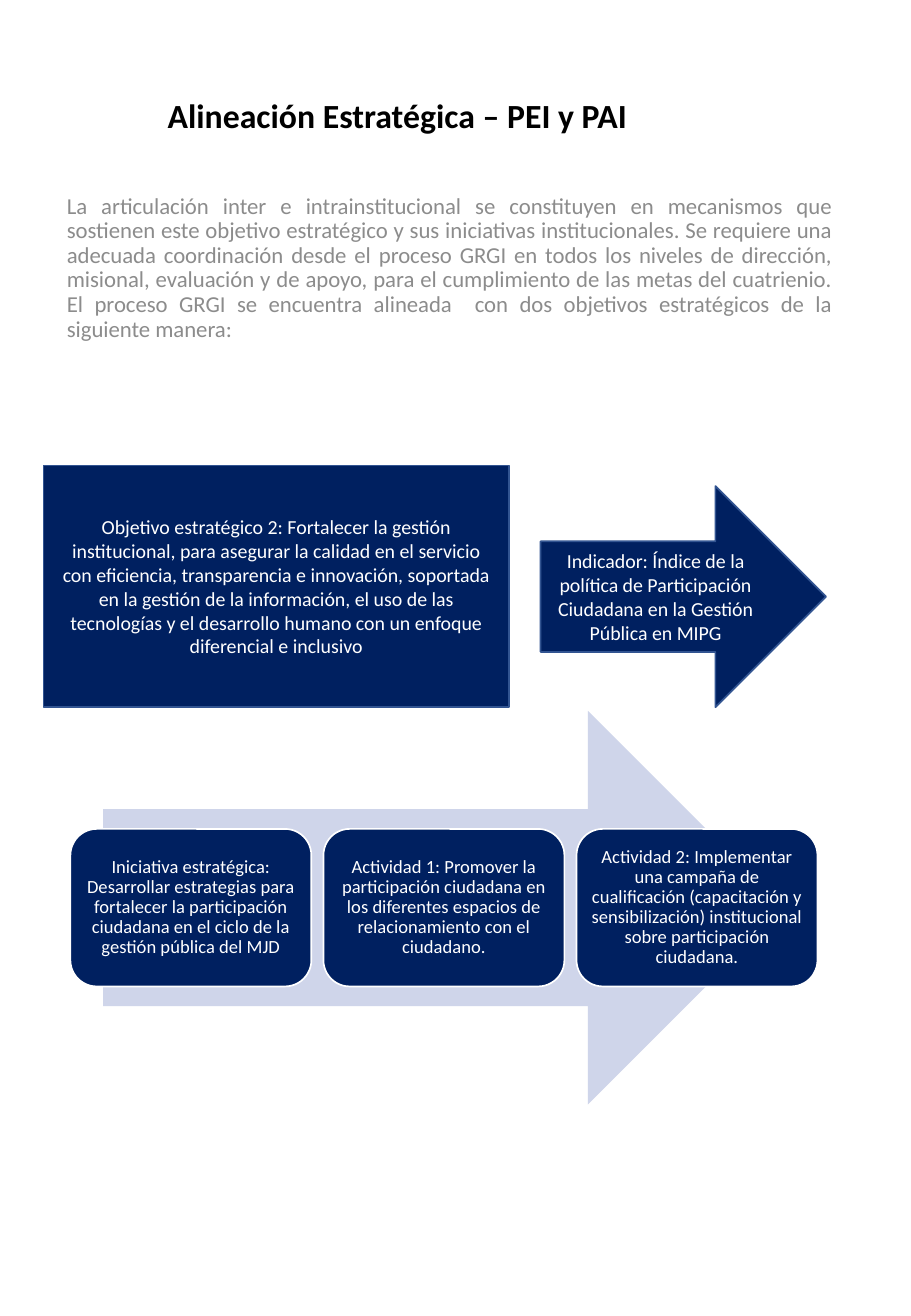
import pptx
import pptx.dml.color
import pptx.enum.shapes
import pptx.enum.text
import pptx.util
from lxml import etree

Inches = pptx.util.Inches
Pt = pptx.util.Pt
Align = pptx.enum.text.PP_ALIGN
Anchor = pptx.enum.text.MSO_ANCHOR
Preset = pptx.enum.shapes.MSO_SHAPE

FONT = "Calibri"
NAVY = "002060"
EDGE = "325491"
PALE = "CFD5EA"
GREY = "8C8C8C"
WHITE = "FFFFFF"
BLACK = "000000"

TITLE = "Alineación Estratégica – PEI y PAI"
INTRO = (
    "La articulación inter e intrainstitucional se constituyen en mecanismos que "
    "sostienen este objetivo estratégico y sus iniciativas institucionales. Se requiere "
    "una adecuada coordinación desde el proceso GRGI en todos los niveles de dirección, "
    "misional, evaluación y de apoyo, para el cumplimiento de las metas del cuatrienio. "
    "El proceso GRGI se encuentra alineada  con dos objetivos estratégicos de la "
    "siguiente manera:"
)
OBJECTIVE = (
    "Objetivo estratégico 2: Fortalecer la gestión institucional, para asegurar la "
    "calidad en el servicio con eficiencia, transparencia e innovación, soportada en la "
    "gestión de la información, el uso de las tecnologías y el desarrollo humano con un "
    "enfoque diferencial e inclusivo"
)
INDICATOR = (
    "Indicador: Índice de la política de Participación Ciudadana en la Gestión "
    "Pública en MIPG"
)
STEPS = [
    "Iniciativa estratégica: Desarrollar estrategias para fortalecer la participación "
    "ciudadana en el ciclo de la gestión pública del MJD",
    "Actividad 1: Promover la participación ciudadana en los diferentes espacios de "
    "relacionamiento con el ciudadano.",
    "Actividad 2: Implementar una campaña de cualificación (capacitación y "
    "sensibilización) institucional sobre participación ciudadana.",
]


def color(hex_code):
    return pptx.dml.color.RGBColor.from_string(hex_code)


def write(shape, text, size, hex_code, align, anchor, spacing=1.0, bold=False):
    frame = shape.text_frame
    frame.word_wrap = True
    frame.auto_size = pptx.enum.text.MSO_AUTO_SIZE.NONE
    frame.vertical_anchor = anchor
    para = frame.paragraphs[0]
    para.alignment = align
    para.line_spacing = spacing
    para.space_before = Pt(0)
    span = para.add_run()
    span.text = text
    span.font.name = FONT
    span.font.size = Pt(size)
    span.font.bold = bold
    span.font.color.rgb = color(hex_code)
    return para


def place(shape, box):
    shape.left, shape.top, shape.width, shape.height = map(Inches, box)


def add_block(page, preset, box, fill, line=None):
    block = page.shapes.add_shape(preset, *map(Inches, box))
    block.shadow.inherit = False
    block.fill.solid()
    block.fill.fore_color.rgb = color(fill)
    if line:
        block.line.color.rgb = color(line)
        block.line.width = Pt(1)
    else:
        block.line.fill.background()
    return block


def add_heading(page, box):
    title = page.shapes.title
    place(title, box)
    write(title, TITLE, 20, BLACK, Align.LEFT, Anchor.TOP, bold=True)


def add_intro(page, box):
    body = page.placeholders[1]
    place(body, box)
    para = write(body, INTRO, 13.5, GREY, Align.JUSTIFY, Anchor.TOP, spacing=0.9)
    properties = para._p.get_or_add_pPr()
    properties.set("marL", "0")
    properties.set("indent", "0")
    etree.SubElement(properties, pptx.oxml.ns.qn("a:buNone"))


def add_objective(page, box):
    """Objective on the left, its indicator arrow on the right, bottoms aligned."""
    left, top, width, height = box
    objective_width, arrow_width, arrow_height = 3.83, 2.35, 1.82
    parts = [
        (Preset.RECTANGLE, (left, top, objective_width, height), OBJECTIVE),
        (Preset.RIGHT_ARROW,
         (left + width - arrow_width, top + height - arrow_height,
          arrow_width, arrow_height), INDICATOR),
    ]
    for preset, part_box, text in parts:
        block = add_block(page, preset, part_box, NAVY, EDGE)
        write(block, text, 11.8, WHITE, Align.CENTER, Anchor.MIDDLE)


def add_process(page, box):
    """Equal step cards centred over a pale arrow."""
    left, top, width, height = box
    margin = 0.27
    add_block(page, Preset.RIGHT_ARROW,
              (left + margin, top, width - 2 * margin, height), PALE)
    gap = 0.1
    card_width = (width - gap * (len(STEPS) - 1)) / len(STEPS)
    card_height = height * 0.4
    for index, text in enumerate(STEPS):
        card_left = left + index * (card_width + gap)
        card_top = top + (height - card_height) / 2
        card = add_block(page, Preset.ROUNDED_RECTANGLE,
                         (card_left, card_top, card_width, card_height), NAVY, WHITE)
        frame = card.text_frame
        frame.margin_left = frame.margin_right = Inches(0.05)
        frame.margin_top = frame.margin_bottom = Inches(0.05)
        write(card, text, 11, WHITE, Align.CENTER, Anchor.MIDDLE, spacing=0.9)


def main():
    deck = pptx.Presentation()
    deck.slide_width = Inches(7.5)
    deck.slide_height = Inches(10.83)
    page = deck.slides.add_slide(deck.slide_layouts[1])
    add_intro(page, (0.45, 1.55, 6.5, 8.9))
    add_heading(page, (1.28, 0.73, 4.53, 0.44))
    add_objective(page, (0.36, 3.83, 6.44, 1.99))
    add_process(page, (0.58, 5.85, 6.15, 3.24))
    deck.save("out.pptx")


if __name__ == "__main__":
    main()
